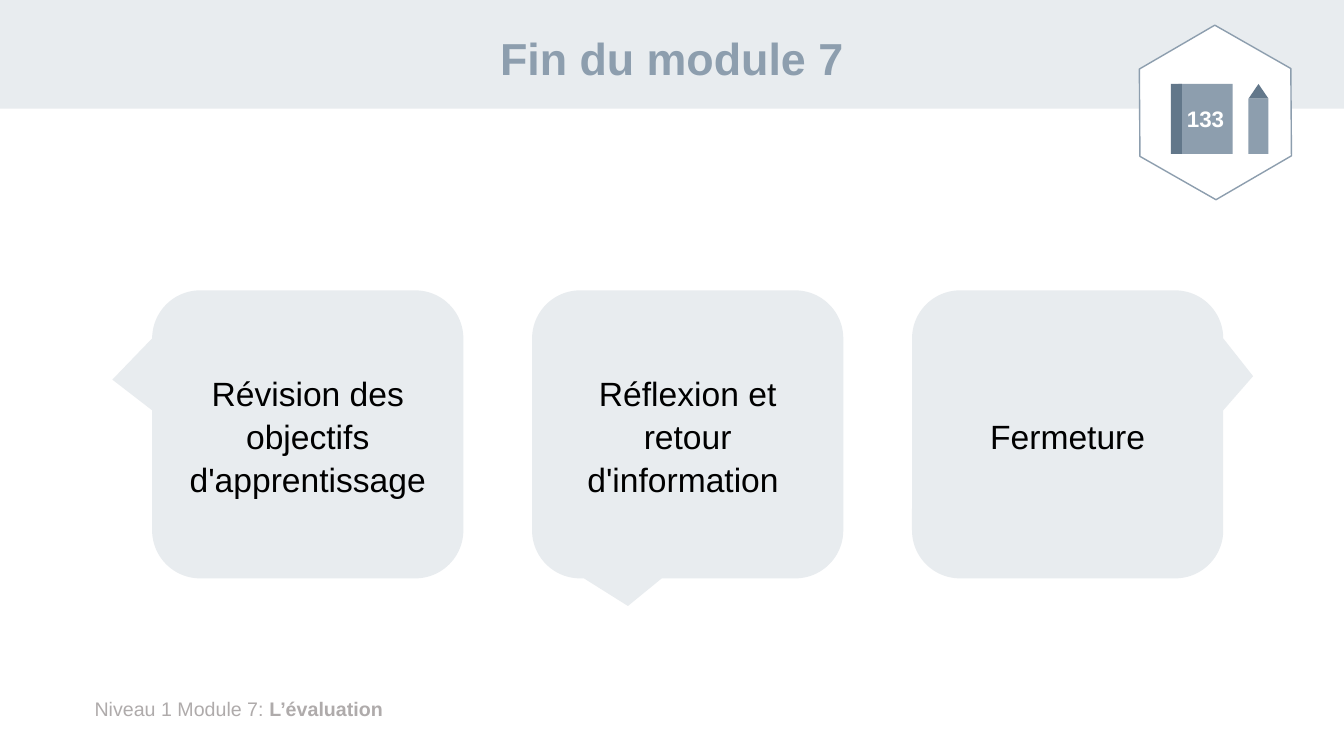
from pptx import Presentation
from pptx.dml.color import RGBColor
from pptx.enum.shapes import MSO_SHAPE as Preset
from pptx.enum.text import MSO_ANCHOR as Anchor, MSO_AUTO_SIZE as AutoSize, PP_ALIGN as Align
from pptx.util import Pt

PALE = RGBColor(0xE8, 0xEC, 0xEF)
SLATE = RGBColor(0x8D, 0x9E, 0xAE)
DARK_SLATE = RGBColor(0x62, 0x77, 0x8A)
GREY = RGBColor(0xAF, 0xAB, 0xAB)
BLACK = RGBColor(0, 0, 0)
WHITE = RGBColor(0xFF, 0xFF, 0xFF)

CALLOUT_LEFT, CALLOUT_STEP = 108.7, 271.4
CALLOUTS = [
    ("Révision des objectifs d'apprentissage", (-0.628, -0.19)),
    ("Réflexion et retour d'information ", (-0.192, 0.596)),
    ("Fermeture", (0.596, -0.202)),
]


def set_all(target, values):
    for name, value in values.items():
        setattr(target, name, value)


def add_span(para, text, size, color, bold=False):
    span = para.add_run()
    span.text = text
    set_all(span.font, {"name": "Arial", "size": Pt(size), "bold": bold})
    span.font.color.rgb = color


def write_centred(box, text, size, color, bold=False, wrap=True, **spacing):
    """Write one centred paragraph; spacing holds paragraph attributes."""
    set_all(box.text_frame, {"word_wrap": wrap, "auto_size": AutoSize.NONE,
                             "vertical_anchor": Anchor.MIDDLE})
    para = box.text_frame.paragraphs[0]
    set_all(para, {"alignment": Align.CENTER, **spacing})
    add_span(para, text, size, color, bold)


def add_figure(shapes, preset, bounds, fill, line=None, adjustments=()):
    """Add a flat preset shape; bounds are left, top, width, height in points."""
    figure = shapes.add_shape(preset, *map(Pt, bounds))
    figure.shadow.inherit = False
    figure.fill.solid()
    figure.fill.fore_color.rgb = fill
    if line is None:
        figure.line.fill.background()
    else:
        figure.line.color.rgb = line
        figure.line.width = Pt(1)
    for index, value in enumerate(adjustments):
        figure.adjustments[index] = value
    return figure


def add_title(page, text):
    title = page.shapes.title
    set_all(title, {"left": Pt(66), "top": Pt(9.4), "width": Pt(828), "height": Pt(68.4)})
    write_centred(title, text, 32, SLATE, bold=True, line_spacing=0.9)


def add_band(page):
    """Add the header band behind the title."""
    band = add_figure(page.shapes, Preset.RECTANGLE, (0, 0, 960, 77.6), PALE)
    page.shapes.title.element.addprevious(band.element)


def add_footer(page):
    box = page.shapes.add_textbox(Pt(60.5), Pt(494.6), Pt(817), Pt(24.5))
    box.text_frame.word_wrap = True
    para = box.text_frame.paragraphs[0]
    add_span(para, "Niveau 1 Module 7: ", 14, GREY)
    add_span(para, "L’évaluation", 14, GREY, bold=True)


def add_callouts(page):
    for index, (text, tip) in enumerate(CALLOUTS):
        bounds = (CALLOUT_LEFT + index * CALLOUT_STEP, 207.4, 222.3, 205.7)
        callout = add_figure(page.shapes, Preset.ROUNDED_RECTANGULAR_CALLOUT, bounds,
                             PALE, adjustments=(*tip, 0.167))
        write_centred(callout, text, 24, BLACK, line_spacing=1.07, space_after=Pt(8))


def add_badge(page, number):
    """Add the hexagon with the numbered book and the pencil."""
    shapes = page.shapes.add_group_shape().shapes
    hexagon = add_figure(shapes, Preset.HEXAGON, (805.6, 26.4, 125.1, 107.9),
                         WHITE, SLATE, (0.29, 1.155))
    hexagon.rotation = 29.7
    book = add_figure(shapes, Preset.RECTANGLE, (841.7, 60, 38.9, 50), SLATE)
    write_centred(book, number, 16, WHITE, bold=True, wrap=False)
    add_figure(shapes, Preset.RECTANGLE, (836.4, 60, 7.8, 50), DARK_SLATE)
    add_figure(shapes, Preset.ISOSCELES_TRIANGLE, (891.8, 60, 14.3, 10.5), DARK_SLATE)
    add_figure(shapes, Preset.RECTANGLE, (891.8, 70.5, 14.3, 39.5), SLATE)


def main():
    deck = Presentation()
    set_all(deck, {"slide_width": Pt(960), "slide_height": Pt(540)})
    page = deck.slides.add_slide(deck.slide_layouts.get_by_name("Title Only"))
    add_band(page)
    add_title(page, "Fin du module 7")
    add_footer(page)
    add_callouts(page)
    add_badge(page, "133")
    deck.save("out.pptx")


if __name__ == "__main__":
    main()
